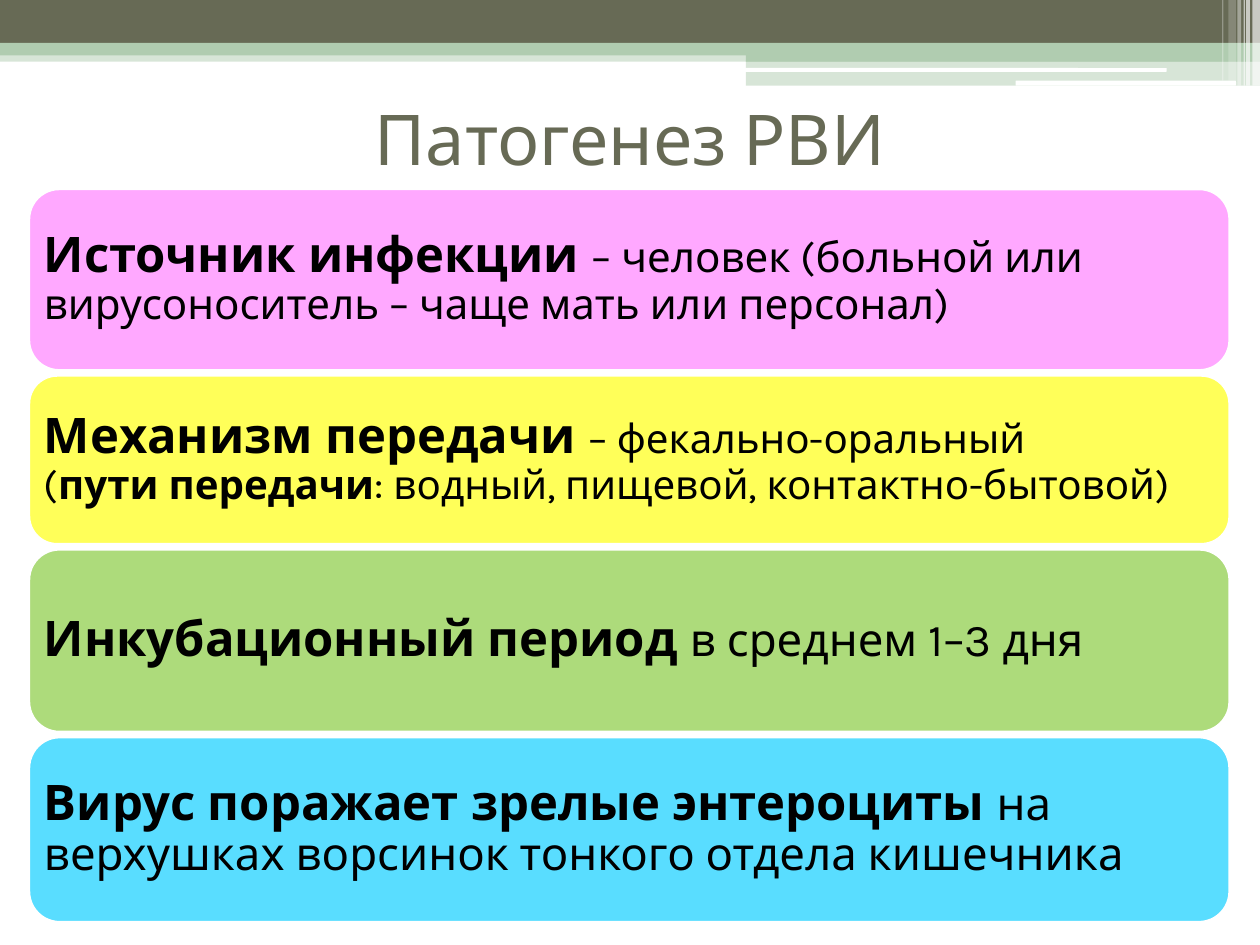
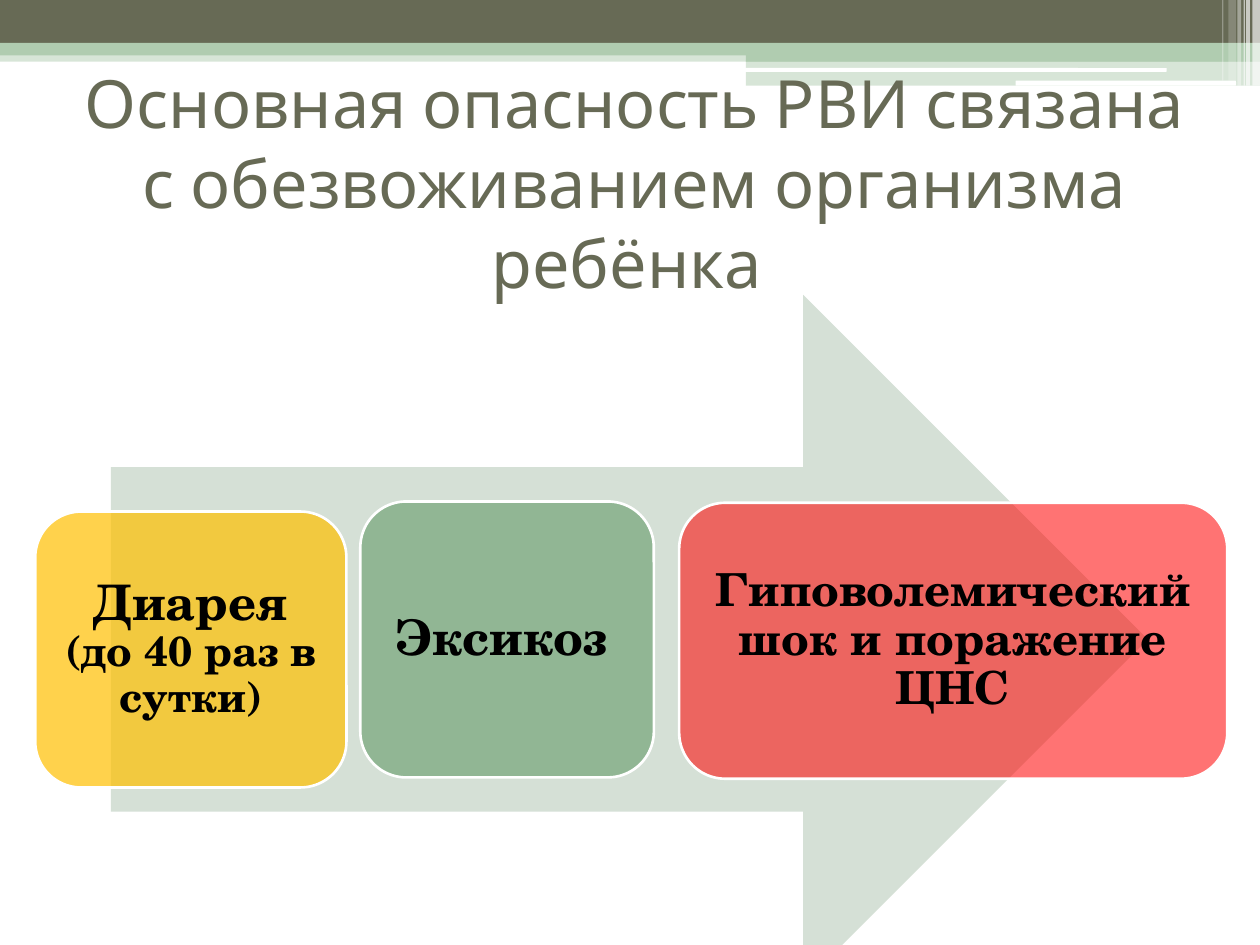
"""Builds two slides on the pathogenesis and dangers of a viral infection."""
from lxml import etree
from pptx import Presentation
from pptx.dml.color import RGBColor
from pptx.enum.shapes import MSO_SHAPE
from pptx.enum.text import MSO_ANCHOR, PP_ALIGN
from pptx.oxml.ns import qn
from pptx.util import Inches, Pt

RECT = MSO_SHAPE.RECTANGLE
ROUND = MSO_SHAPE.ROUNDED_RECTANGLE
ARROW = MSO_SHAPE.RIGHT_ARROW
MIDDLE = MSO_ANCHOR.MIDDLE
LEFT, CENTER = PP_ALIGN.LEFT, PP_ALIGN.CENTER

BLACK = RGBColor(0x00, 0x00, 0x00)
WHITE = RGBColor(0xFF, 0xFF, 0xFF)
OLIVE = RGBColor(0x67, 0x6A, 0x55)
MINT = RGBColor(0xB0, 0xCC, 0xB0)
PALE = RGBColor(0xD5, 0xE0, 0xD6)
PINK = RGBColor(0xFF, 0x99, 0xFF)
YELLOW = RGBColor(0xFF, 0xFF, 0x00)
LIME = RGBColor(0x92, 0xD0, 0x50)
CYAN = RGBColor(0x00, 0xCC, 0xFF)
AMBER = RGBColor(0xFF, 0xC0, 0x00)
GREEN = RGBColor(0x72, 0xA3, 0x76)
RED = RGBColor(0xFF, 0x00, 0x00)

SANS, SERIF = "Karla", "TeX Gyre Schola"
PAD, CORNER = 0.12, 0.05

BANDS = [
    (RECT, 0, 0.4, 10, 0.09, MINT, 50),
    (RECT, 0, 0, 10, 0.34, OLIVE, 100),
    (RECT, 0, 0.34, 10, 0.1, MINT, 100),
    (RECT, 5.92, 0.39, 4.08, 0.1, MINT, 100),
    (RECT, 5.92, 0.48, 4.08, 0.2, MINT, 50),
    (ROUND, 5.91, 0.54, 3.35, 0.03, WHITE, 100),
    (ROUND, 8.06, 0.64, 1.75, 0.04, WHITE, 100),
]
STRIPES = [
    (9.94, 0.06, 0.68, 65),
    (9.89, 0.03, 0.68, 65),
    (9.87, 0.01, 0.68, 60),
    (9.82, 0.03, 0.68, 40),
    (9.75, 0.06, 0.64, 20),
    (9.7, 0.01, 0.64, 30),
]
TITLES = [
    ("Патогенез РВИ", 40, (0.5, 0.7, 9, 0.78)),
    ("Основная опасность РВИ связана с обезвоживанием организма ребёнка ",
     38, (0.39, 0.78, 9.3, 1.33)),
]
FACTS = [
    (1.44, PINK, 85, [
        ("Источник инфекции ", 28, True),
        ("– человек (больной или вирусоноситель – чаще мать или персонал)", 24, False)]),
    (1.34, YELLOW, 65, [
        ("Механизм передачи ", 28, True),
        ("– фекально-оральный", 23, False),
        ("\n", 23, False),
        ("(", 23, False),
        ("пути передачи", 23, True),
        (": водный, пищевой, контактно-бытовой)", 23, False)]),
    (1.45, LIME, 75, [
        ("Инкубационный период ", 28, True),
        ("в среднем 1–3 дня", 26, False)]),
    (1.47, CYAN, 65, [
        ("Вирус поражает зрелые энтероциты ", 28, True),
        ("на верхушках ворсинок тонкого отдела кишечника", 26, False)]),
]
STAGES = [
    (0.28, 4.06, 2.47, AMBER, 70, [
        ("Диарея", 28, True),
        ("\n", 28, True),
        ("(до 40 раз в сутки)", 24, True)]),
    (2.86, 3.98, 2.33, GREEN, 68, [
        ("Эксикоз", 28, True),
        (" ", 24, True)]),
    (5.39, 3.99, 4.35, RED, 55, [
        ("Гиповолемический шок и поражение ЦНС", 26, True)]),
]


def draw(slide, kind, x, y, w, h, color, alpha=100):
    shape = slide.shapes.add_shape(kind, Inches(x), Inches(y), Inches(w), Inches(h))
    shape.shadow.inherit = False
    shape.line.fill.background()
    shape.fill.solid()
    shape.fill.fore_color.rgb = color
    if alpha < 100:
        tone = shape.fill._xPr.find(qn("a:solidFill"))[0]
        etree.SubElement(tone, qn("a:alpha"), val=str(alpha * 1000))
    return shape


def card(slide, x, y, w, h, color, alpha, parts, face, align):
    shape = draw(slide, ROUND, x, y, w, h, color, alpha)
    shape.line.color.rgb = WHITE
    shape.line.width = Pt(1.5)
    frame = shape.text_frame
    frame.word_wrap = True
    frame.vertical_anchor = MIDDLE
    inset = Inches(PAD - CORNER * min(w, h))
    frame.margin_left = frame.margin_right = inset
    frame.margin_top = frame.margin_bottom = inset
    para = frame.paragraphs[0]
    para.alignment = align
    para.line_spacing = 0.9
    para.font.name = face
    para.font.color.rgb = BLACK
    for text, size, bold in parts:
        if text == "\n":
            para.add_line_break()
            continue
        run = para.add_run()
        run.text = text
        run.font.size = Pt(size)
        run.font.bold = bold
        run.font.name = face
        run.font.color.rgb = BLACK


deck = Presentation()
deck.slide_width, deck.slide_height = Inches(10), Inches(7.5)
blank = deck.slide_layouts[6]

for title, size, place in TITLES:
    slide = deck.slides.add_slide(blank)
    for band in BANDS:
        draw(slide, *band)
    for x, w, h, alpha in STRIPES:
        draw(slide, RECT, x, 0, w, h, WHITE, alpha)
    frame = slide.shapes.add_textbox(*map(Inches, place)).text_frame
    frame.word_wrap = True
    frame.vertical_anchor = MIDDLE
    para = frame.paragraphs[0]
    para.text = title
    para.alignment = CENTER
    para.font.name = SANS
    para.font.size = Pt(size)
    para.font.color.rgb = OLIVE

first, second = deck.slides

top = 1.5
for high, color, alpha, parts in FACTS:
    card(first, 0.23, top, 9.53, high, color, alpha, parts, SANS, LEFT)
    top += high + 0.04

draw(second, ARROW, 0.88, 2.34, 8.23, 5.47, PALE)
for x, y, w, color, alpha, parts in STAGES:
    card(second, x, y, w, 2.19, color, alpha, parts, SERIF, CENTER)

deck.save("out.pptx")
